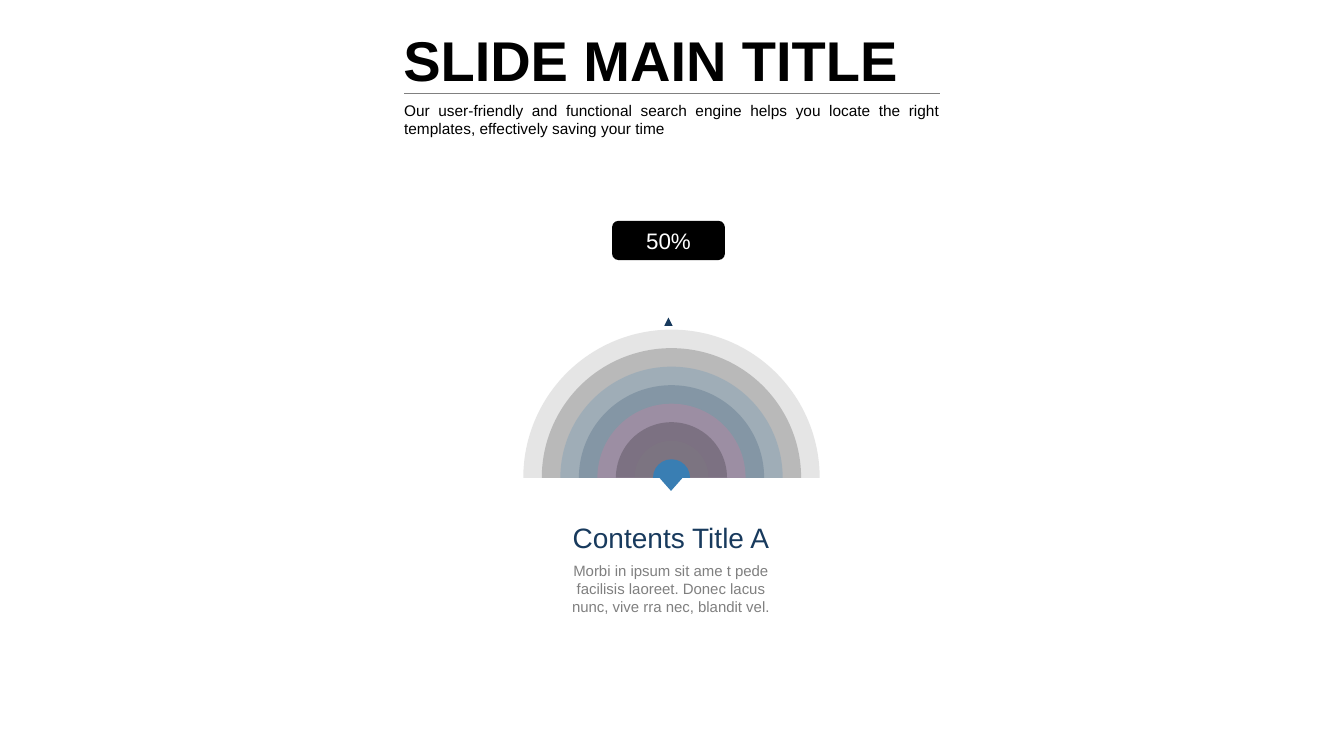
from dataclasses import dataclass

from lxml import etree
from pptx import Presentation
from pptx.dml.color import RGBColor
from pptx.enum.dml import MSO_LINE
from pptx.enum.shapes import MSO_CONNECTOR, MSO_SHAPE
from pptx.enum.text import MSO_ANCHOR, MSO_AUTO_SIZE, PP_ALIGN
from pptx.oxml.ns import qn
from pptx.util import Inches, Pt

PIE, TRIANGLE, ROUNDED = MSO_SHAPE.BLOCK_ARC, MSO_SHAPE.ISOSCELES_TRIANGLE, MSO_SHAPE.ROUNDED_RECTANGLE
PIE = MSO_SHAPE.PIE
STRAIGHT, DOTTED = MSO_CONNECTOR.STRAIGHT, MSO_LINE.ROUND_DOT
CENTER, JUSTIFY = PP_ALIGN.CENTER, PP_ALIGN.JUSTIFY
TOP, MIDDLE = MSO_ANCHOR.TOP, MSO_ANCHOR.MIDDLE
FIT_SHAPE = MSO_AUTO_SIZE.SHAPE_TO_FIT_TEXT


@dataclass(frozen=True)
class Theme:
    font: str = "Arial"
    black: str = "000000"
    white: str = "FFFFFF"
    gray: str = "808080"
    charcoal: str = "0D0D0D"
    blue: str = "397EB3"
    navy: str = "183A5D"
    pink: str = "FD729B"
    title_size: float = 40
    heading_size: float = 20
    badge_size: float = 16
    subtitle_size: float = 11
    body_size: float = 10.7


@dataclass(frozen=True)
class Ring:
    color: str
    opacity: int = 20


@dataclass(frozen=True)
class Rule:
    x1: float
    y1: float
    x2: float
    y2: float
    color: str


THEME = Theme()

# Concentric half discs, from the outside in
CENTER_X, CENTER_Y, OUTER_DIAMETER = 6.66, 4.74, 2.94
RINGS = [
    Ring(THEME.gray), Ring(THEME.charcoal), Ring(THEME.blue), Ring(THEME.navy),
    Ring(THEME.pink), Ring(THEME.black), Ring(THEME.gray), Ring(THEME.blue, 100),
]
TITLE_RULES = [
    Rule(4.01, 0.93, 9.32, 0.93, THEME.gray),
    Rule(4.01, 0.95, 9.32, 0.95, THEME.white),
]
POINTER = Rule(6.63, 3.15, 6.63, 3.17, THEME.navy)


def set_opacity(element, percent: int) -> None:
    for color in element.iter(qn("a:srgbClr")):
        etree.SubElement(color, qn("a:alpha"), val=str(percent * 1000))


def add_filled(slide, kind, x: float, y: float, w: float, h: float, color: str):
    sp = slide.shapes.add_shape(kind, Inches(x), Inches(y), Inches(w), Inches(h))
    sp.shadow.inherit = False
    sp.fill.solid()
    sp.fill.fore_color.rgb = RGBColor.from_string(color)
    sp.line.fill.background()
    return sp


def add_ring(slide, ring: Ring, diameter: float) -> None:
    sp = add_filled(slide, PIE, CENTER_X - diameter / 2, CENTER_Y - diameter / 2,
                    diameter, diameter, ring.color)
    sp.adjustments[0], sp.adjustments[1] = 108, 0
    if ring.opacity < 100:
        set_opacity(sp._element.spPr, ring.opacity)


def add_rule(slide, rule: Rule):
    line = slide.shapes.add_connector(STRAIGHT, Inches(rule.x1), Inches(rule.y1),
                                      Inches(rule.x2), Inches(rule.y2))
    line.line.color.rgb = RGBColor.from_string(rule.color)
    line.line.width = Pt(1)
    etree.SubElement(line._element.spPr, qn("a:effectLst"))
    return line


def write(sp, text: str, size: float, color: str, align,
          margins: tuple[float, float] = (0, 0), anchor=TOP, bold: bool = False):
    tf = sp.text_frame
    tf.word_wrap = True
    tf.vertical_anchor = anchor
    tf.margin_left = tf.margin_right = Inches(margins[0])
    tf.margin_top = tf.margin_bottom = Inches(margins[1])
    p = tf.paragraphs[0]
    p.text = text
    p.alignment = align
    p.font.name = THEME.font
    p.font.size = Pt(size)
    p.font.bold = bold
    p.font.color.rgb = RGBColor.from_string(color)
    return p


def add_box(slide, x: float, y: float, w: float, h: float):
    return slide.shapes.add_textbox(Inches(x), Inches(y), Inches(w), Inches(h))


def add_header(slide) -> None:
    title = slide.shapes.title
    title.left, title.top = Inches(3.9), Inches(0.2)
    title.width, title.height = Inches(5.53), Inches(0.78)
    write(title, "SLIDE MAIN TITLE", THEME.title_size, THEME.black, JUSTIFY,
          (0.1, 0.05), bold=True)
    subtitle = add_box(slide, 3.91, 0.95, 5.51, 0.47)
    write(subtitle, "Our user-friendly and functional search engine helps you locate "
          "the right templates, effectively saving your time",
          THEME.subtitle_size, THEME.black, JUSTIFY, (0.1, 0.05))
    for sp in (title, subtitle):
        sp.text_frame.auto_size = FIT_SHAPE
    for rule in TITLE_RULES:
        add_rule(slide, rule)


def add_gauge(slide) -> None:
    step = OUTER_DIAMETER / len(RINGS)
    for i, ring in enumerate(RINGS):
        add_ring(slide, ring, OUTER_DIAMETER - i * step)
    tip = add_filled(slide, TRIANGLE, 6.54, CENTER_Y, 0.23, 0.13, THEME.blue)
    tip.rotation = 180

    # Dotted pointer with its arrowhead at the start
    pointer = add_rule(slide, POINTER)
    pointer.line.dash_style = DOTTED
    etree.SubElement(pointer.line._get_or_add_ln(), qn("a:headEnd"), type="triangle")

    badge = add_filled(slide, ROUNDED, 6.07, 2.19, 1.12, 0.39, THEME.black)
    write(badge, "50%", THEME.badge_size, THEME.white, CENTER, (0.13, 0.07), MIDDLE)


def add_caption(slide) -> None:
    p = write(add_box(slide, 5.54, 5.16, 2.23, 0.31), "Contents Title A",
              THEME.heading_size, THEME.navy, CENTER)
    p.space_after = Pt(4)
    p = write(add_box(slide, 5.54, 5.57, 2.23, 0.77),
              "Morbi in ipsum sit ame t pede facilisis laoreet. "
              "Donec lacus nunc, vive rra nec, blandit vel.",
              THEME.body_size, THEME.black, CENTER)
    set_opacity(p._p, 50)


def main() -> None:
    prs = Presentation()
    prs.slide_width, prs.slide_height = Inches(13.33), Inches(7.5)
    slide = prs.slides.add_slide(prs.slide_layouts[5])  # title only
    add_gauge(slide)
    add_caption(slide)
    add_header(slide)
    prs.save("out.pptx")


if __name__ == "__main__":
    main()
